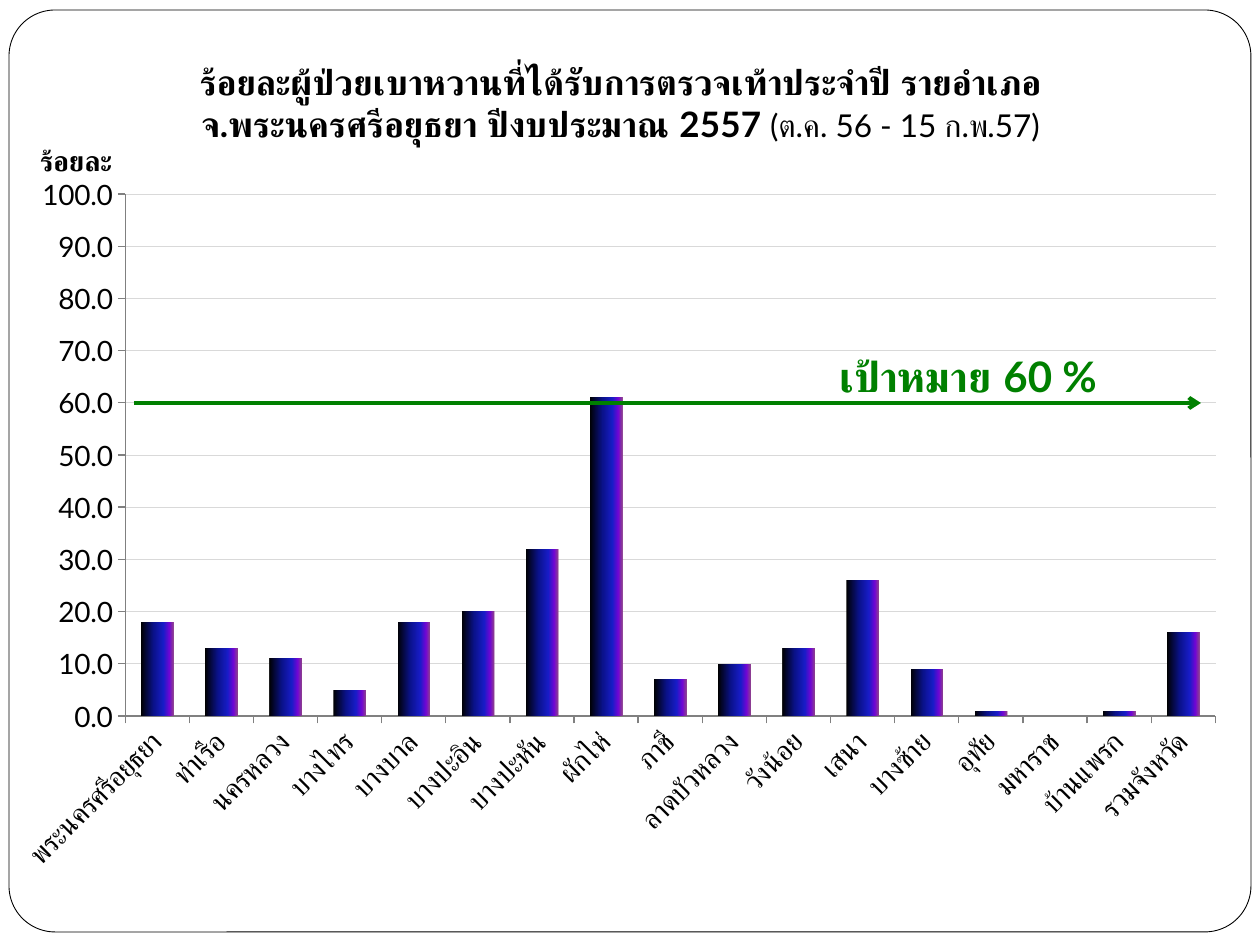
from dataclasses import dataclass

from lxml import etree
from pptx import Presentation
from pptx import util as u
from pptx.chart.data import CategoryChartData
from pptx.dml.color import RGBColor
from pptx.enum import chart as ch, dml, shapes, text
from pptx.oxml import parse_xml
from pptx.oxml.ns import nsdecls, qn

PX = 914400 / 126


@dataclass(frozen=True)
class Theme:
    font: str = "Lato"
    ink: str = "000000"
    paper: str = "FFFFFF"
    grid: str = "D9D9D9"
    axis: str = "808080"
    target: str = "008000"
    bar: tuple = ((0, "000000"), (40, "0A128C"), (70, "181CC7"),
                  (88, "7005D4"), (100, "8C3D91"))
    title_pt: int = 20
    period_pt: int = 18
    label_pt: int = 16
    target_pt: int = 24


T = Theme()

TITLE = [
    [("ร้อยละผู้ป่วยเบาหวานที่ได้รับการตรวจเท้าประจำปี รายอำเภอ", T.title_pt, True)],
    [("จ.พระนครศรีอยุธยา ปีงบประมาณ 2557 ", T.title_pt, True),
     ("(ต.ค. 56 - 15 ก.พ.57)", T.period_pt, False)],
]
DISTRICTS = {
    "พระนครศรีอยุธยา": 18, "ท่าเรือ": 13, "นครหลวง": 11, "บางไทร": 5,
    "บางบาล": 18, "บางปะอิน": 20, "บางปะหัน": 32, "ผักไห่": 61,
    "ภาชี": 7, "ลาดบัวหลวง": 10, "วังน้อย": 13, "เสนา": 26,
    "บางซ้าย": 9, "อุทัย": 1, "มหาราช": 0, "บ้านแพรก": 1,
    "รวมจังหวัด": 16,
}


def px(*values):
    return [u.Emu(round(v * PX)) for v in values]


def rgb(value):
    return RGBColor.from_string(value)


def style(font, size, color=T.ink, bold=False):
    font.name, font.size, font.bold = T.font, u.Pt(size), bold
    font.color.rgb = rgb(color)


def add_run(p, content, size, color=T.ink, bold=False):
    r = p.add_run()
    r.text = content
    style(r.font, size, color, bold)


def set_layout(parent, index, box, **parts):
    """Place a chart part by px offsets and sizes inside the chart box."""
    for old in parent.findall(qn("c:layout")):
        parent.remove(old)
    target = '<c:layoutTarget val="inner"/>' if "w" in parts else ""
    modes = "".join(f'<c:{k}Mode val="edge"/>' for k in parts if k in "xy")
    sizes = "".join(f'<c:{k} val="{v / box[k in "yh"]:.4f}"/>'
                    for k, v in parts.items())
    parent.insert(index, parse_xml(
        f'<c:layout {nsdecls("c")}><c:manualLayout>{target}{modes}{sizes}'
        "</c:manualLayout></c:layout>"))


def add_frame(s, x, y, w, h):
    sp = s.shapes.add_shape(shapes.MSO_SHAPE.ROUNDED_RECTANGLE, *px(x, y, w, h))
    sp.adjustments[0] = 0.05
    sp.shadow.inherit = False
    sp.fill.solid()
    sp.fill.fore_color.rgb = rgb(T.paper)
    sp.line.color.rgb = rgb(T.ink)
    sp.line.width = u.Pt(0.5)


def fill_bars(series):
    fill = series.format.fill
    fill.gradient()
    fill.gradient_angle = 0
    stops = next(series._element.iter(qn("a:gsLst")))
    for old in list(stops):
        stops.remove(old)
    for pos, color in T.bar:
        gs = etree.SubElement(stops, qn("a:gs"), pos=str(pos * 1000))
        etree.SubElement(gs, qn("a:srgbClr"), val=color)


def format_axes(chart, box):
    val, cat = chart.value_axis, chart.category_axis
    for axis in (val, cat):
        axis.major_tick_mark = ch.XL_TICK_MARK.OUTSIDE
        axis.format.line.color.rgb = rgb(T.axis)
        style(axis.tick_labels.font, T.label_pt)
    cat._element.find(qn("c:txPr")).find(qn("a:bodyPr")).set("rot", "-2700000")

    val.minimum_scale, val.maximum_scale, val.major_unit = 0, 100, 10
    val.tick_labels.number_format = "#,##0.0"
    val.tick_labels.number_format_is_linked = False
    grid = val.major_gridlines.format.line
    grid.color.rgb = rgb(T.grid)
    grid.width = u.Pt(0.25)
    grid.dash_style = dml.MSO_LINE.ROUND_DOT

    tf = val.axis_title.text_frame
    add_run(tf.paragraphs[0], "ร้อยละ", T.label_pt, bold=True)
    tf._txBody.find(qn("a:bodyPr")).set("rot", "0")
    set_layout(val.axis_title._element, 1, box, x=10, y=104)


def add_district_chart(s, x, y, w, h):
    data = CategoryChartData(number_format="0")
    data.categories = list(DISTRICTS)
    data.add_series("Series 1", list(DISTRICTS.values()))
    chart = s.shapes.add_chart(ch.XL_CHART_TYPE.COLUMN_CLUSTERED,
                               *px(x, y, w, h), data).chart
    style(chart.font, T.label_pt)
    chart.has_legend = False
    plot = chart.plots[0]
    plot.gap_width = 98
    plot.vary_by_categories = False
    fill_bars(plot.series[0])
    format_axes(chart, (w, h))

    tf = chart.chart_title.text_frame
    for i, line in enumerate(TITLE):
        p = tf.add_paragraph() if i else tf.paragraphs[0]
        for content, size, bold in line:
            add_run(p, content, size, bold=bold)
    set_layout(chart.chart_title._element, 1, (w, h), x=171, y=23)
    plot_area = next(chart._chartSpace.iter(qn("c:plotArea")))
    set_layout(plot_area, 0, (w, h), x=115, y=157, w=1091, h=522)


def add_target(s, x, y, w, h):
    """Group the arrow along the bottom of the box with its label above."""
    group = s.shapes.add_group_shape()
    line = group.shapes.add_connector(shapes.MSO_CONNECTOR.STRAIGHT,
                                      *px(x, y + h, x + w, y + h))
    line.line.color.rgb = rgb(T.target)
    line.line.width = u.Pt(2.25)
    etree.SubElement(line.line._get_or_add_ln(), qn("a:tailEnd"), type="arrow")
    etree.SubElement(line._element.spPr, qn("a:effectLst"))

    tf = group.shapes.add_textbox(*px(x + 632, y, 404, 63)).text_frame
    tf.word_wrap = True
    tf.auto_size = text.MSO_AUTO_SIZE.SHAPE_TO_FIT_TEXT
    p = tf.paragraphs[0]
    p.alignment = text.PP_ALIGN.CENTER
    add_run(p, "เป้าหมาย 60 %", T.target_pt, T.target, True)


def main():
    prs = Presentation()
    prs.slide_width, prs.slide_height = px(1260, 945)
    s = prs.slides.add_slide(prs.slide_layouts[6])
    add_frame(s, 9, 10, 1242, 922)
    add_district_chart(s, 25, 37, 1191, 908)
    add_target(s, 134, 344, 1067, 59)
    prs.save("out.pptx")


if __name__ == "__main__":
    main()
